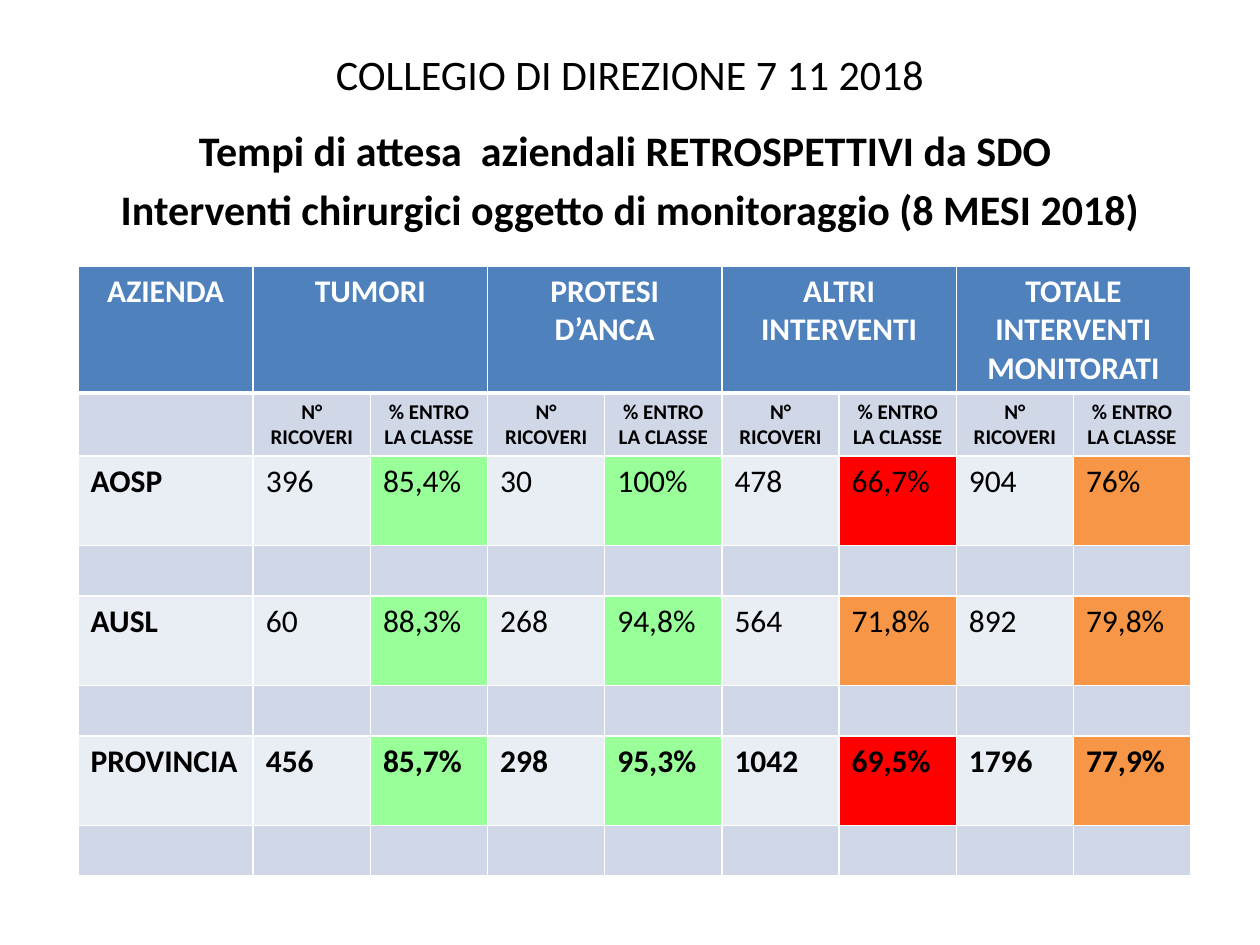
from lxml.etree import SubElement
from pptx import Presentation
from pptx.dml.color import RGBColor
from pptx.enum.text import MSO_ANCHOR, PP_ALIGN
from pptx.oxml.ns import qn
from pptx.util import Inches, Pt

WIDE, HIGH = Inches(10), Inches(7.5)
FONT = "Calibri"
HEX = {
    "ink": "000000", "white": "FFFFFF", "head": "4F81BD",
    "dark": "D0D8E8", "light": "E9EDF4",
    "good": "99FF99", "fair": "F79646", "poor": "FF0000",
}
GROUPS = ["TUMORI", "PROTESI D’ANCA", "ALTRI INTERVENTI",
          "TOTALE INTERVENTI MONITORATI"]
PAIR = ["N° RICOVERI", "% ENTRO LA CLASSE"]
DATA = [
    ["AOSP", "396", "85,4%", "30", "100%", "478", "66,7%", "904", "76%"],
    ["AUSL", "60", "88,3%", "268", "94,8%", "564", "71,8%", "892", "79,8%"],
    ["PROVINCIA", "456", "85,7%", "298", "95,3%", "1042", "69,5%", "1796", "77,9%"],
]
COLS = [1.39] + [0.93] * 8
ROWS = [1.01, 0.5] + [0.71, 0.4] * len(DATA)


def style(para, size, color="ink", bold=False, align=PP_ALIGN.CENTER):
    para.alignment = align
    for run in para.runs:
        font = run.font
        font.name, font.size, font.bold = FONT, Pt(size), bold
        font.color.rgb = RGBColor.from_string(HEX[color])


def add_text(slide, top, height, lines, bold=False, gap=0):
    """Centred lines in a box that leaves 5% of the slide at each side."""
    box = slide.shapes.add_textbox(
        int(WIDE * 0.05), int(HIGH * top), int(WIDE * 0.9), int(HIGH * height))
    frame = box.text_frame
    frame.word_wrap = True
    frame.text = "\n".join(lines)
    for para in frame.paragraphs:
        style(para, 24, bold=bold)
        para.space_before = Pt(gap)
    return frame


def edge(cell, top=1, bottom=1):
    """White borders; widths in points."""
    props = cell._tc.get_or_add_tcPr()
    sides = {"L": 1, "R": 1, "T": top, "B": bottom}
    for spot, (side, width) in enumerate(sides.items()):
        line = SubElement(props, qn(f"a:ln{side}"), w=str(Pt(width)))
        fill = SubElement(line, qn("a:solidFill"))
        SubElement(fill, qn("a:srgbClr"), val=HEX["white"])
        props.insert(spot, line)


def paint(cell, color):
    cell.fill.solid()
    cell.fill.fore_color.rgb = RGBColor.from_string(HEX[color])


def write(cell, text, *look, **more):
    cell.text_frame.text = text
    style(cell.text_frame.paragraphs[0], *look, **more)


def grade(text):
    """Colour of a value: shares are rated, counts stay plain."""
    if not text.endswith("%"):
        return "light"
    share = float(text[:-1].replace(",", "."))
    return "good" if share >= 80 else "fair" if share >= 70 else "poor"


def add_grid(slide):
    frame = slide.shapes.add_table(
        len(ROWS), len(COLS), Inches(0.62), Inches(2.11),
        Inches(sum(COLS)), Inches(sum(ROWS)))
    table = frame.table
    for col, width in zip(table.columns, COLS):
        col.width = Inches(width)
    for row, height in zip(table.rows, ROWS):
        row.height = Inches(height)

    # Base fill and borders, with a thick line under the header
    for r in range(len(ROWS)):
        for cell in table.rows[r].cells:
            paint(cell, "dark" if r else "head")
            edge(cell, top=3 if r == 1 else 1, bottom=1 if r else 3)

    # Header and column labels
    write(table.cell(0, 0), "AZIENDA", 18, "white", True)
    for n, group in enumerate(GROUPS):
        left = 1 + 2 * n
        table.cell(0, left).merge(table.cell(0, left + 1))
        write(table.cell(0, left), group, 18, "white", True)
        for k, label in enumerate(PAIR):
            write(table.cell(1, left + k), label, 12, bold=True)

    # Data rows, each followed by an empty band
    for n, values in enumerate(DATA):
        final = n == len(DATA) - 1
        for c, value in enumerate(values):
            cell = table.cell(2 + 2 * n, c)
            paint(cell, grade(value))
            write(cell, value, 18, bold=final or c == 0, align=PP_ALIGN.LEFT)


def main():
    deck = Presentation()
    deck.slide_width, deck.slide_height = WIDE, HIGH
    slide = deck.slides.add_slide(deck.slide_layouts[6])

    # Title and subtitle
    title = add_text(slide, 0.04, 0.075, ["COLLEGIO DI DIREZIONE 7 11 2018"])
    title.vertical_anchor = MSO_ANCHOR.MIDDLE
    add_text(slide, 0.125, 0.77, [
        "Tempi di attesa  aziendali RETROSPETTIVI da SDO ",
        "Interventi chirurgici oggetto di monitoraggio (8 MESI 2018)",
    ], bold=True, gap=4.8)

    # Waiting times by authority
    add_grid(slide)
    deck.save("out.pptx")


if __name__ == "__main__":
    main()
